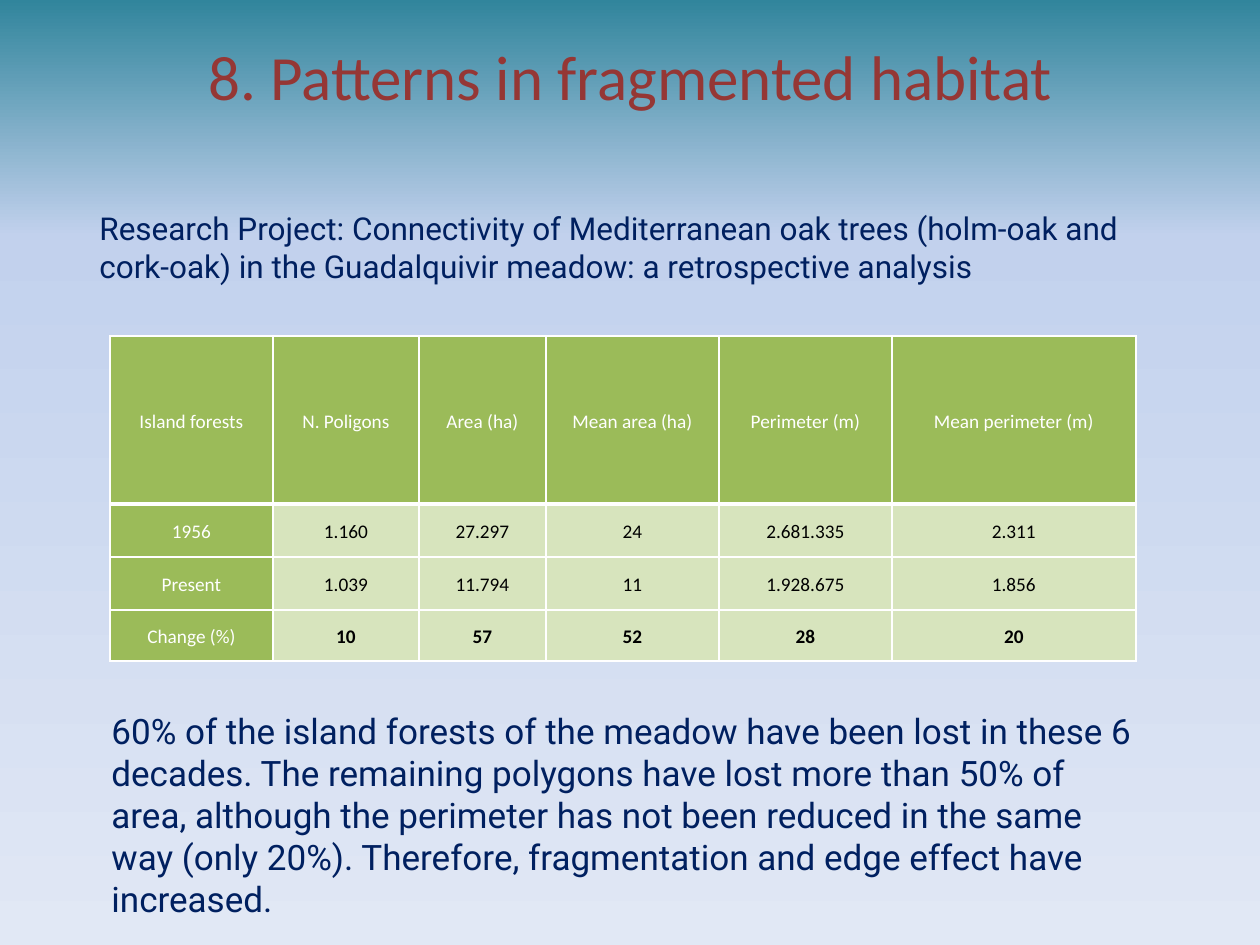
from dataclasses import dataclass

from lxml import etree
from pptx import Presentation
from pptx import util as u
from pptx.dml.color import RGBColor
from pptx.enum import text
from pptx.oxml import ns
from copy import deepcopy

EMU_PER_PX = 914400 / 126


def px(length):
    return u.Emu(round(length * EMU_PER_PX))


@dataclass(frozen=True)
class Theme:
    title_color: str = "953735"
    body_color: str = "002060"
    header_fill: str = "9BBB59"
    value_fill: str = "D7E4BD"
    light: str = "FFFFFF"
    dark: str = "000000"
    background: tuple = ((0, "31859C"), (0.25, "C2D1ED"), (1, "E1E8F5"))
    heading_font: str = "Calibri"
    body_font: str = "Roboto"
    title_size: int = 36
    intro_size: int = 18
    conclusion_size: int = 20
    table_size: int = 11


class SlideBuilder:
    def __init__(self, deck, theme):
        self.theme = theme
        self.slide = deck.slides.add_slide(deck.slide_layouts[6])

    def background(self):
        fill = self.slide.background.fill
        fill.gradient()
        fill.gradient_angle = 270
        stop_list = next(self.slide.element.iter(ns.qn("a:gsLst")))
        stop_list.append(deepcopy(stop_list[-1]))
        for stop, (position, color) in zip(fill.gradient_stops, self.theme.background):
            stop.position = position
            stop.color.rgb = RGBColor.from_string(color)

    def style(self, para, font, size, color, bold=False):
        for span in para.runs:
            span.font.name = font
            span.font.size = u.Pt(size)
            span.font.bold = bold
            span.font.color.rgb = RGBColor.from_string(color)

    def text_box(self, bounds, words, font, size, color):
        box = self.slide.shapes.add_textbox(*map(px, bounds))
        frame = box.text_frame
        frame.word_wrap = True
        frame.text = words
        self.style(frame.paragraphs[0], font, size, color)
        return frame

    def title(self, bounds, words):
        theme = self.theme
        frame = self.text_box(bounds, words, theme.heading_font,
                              theme.title_size, theme.title_color)
        frame.vertical_anchor = text.MSO_ANCHOR.MIDDLE
        frame.paragraphs[0].alignment = text.PP_ALIGN.CENTER

    def body(self, bounds, words, size):
        frame = self.text_box(bounds, words, self.theme.body_font,
                              size, self.theme.body_color)
        frame.auto_size = text.MSO_AUTO_SIZE.SHAPE_TO_FIT_TEXT

    def cell_borders(self, cell, bottom):
        properties = cell._tc.get_or_add_tcPr()
        for index, (side, width) in enumerate(
                (("L", 1), ("R", 1), ("T", 1), ("B", bottom))):
            line = etree.Element(ns.qn(f"a:ln{side}"), w=str(u.Pt(width)))
            solid = etree.SubElement(line, ns.qn("a:solidFill"))
            etree.SubElement(solid, ns.qn("a:srgbClr"), val=self.theme.light)
            properties.insert(index, line)

    def cell(self, cell, words, is_header, bold, bottom):
        theme = self.theme
        cell.fill.solid()
        cell.fill.fore_color.rgb = RGBColor.from_string(
            theme.header_fill if is_header else theme.value_fill)
        cell.margin_left = cell.margin_right = px(6)
        cell.margin_top = cell.margin_bottom = 0
        cell.vertical_anchor = text.MSO_ANCHOR.MIDDLE
        cell.text_frame.text = words
        para = cell.text_frame.paragraphs[0]
        para.alignment = text.PP_ALIGN.CENTER
        para.line_spacing = 1.15
        self.style(para, theme.heading_font, theme.table_size,
                   theme.light if is_header else theme.dark, bold)
        self.cell_borders(cell, bottom)

    def table(self, left, top, widths, heights, rows):
        """Header row and column share one look; the last row's values are bold."""
        table = self.slide.shapes.add_table(
            len(rows), len(widths), px(left), px(top),
            px(sum(widths)), px(sum(heights))).table
        table.horz_banding = False
        for column, width in zip(table.columns, widths):
            column.width = px(width)
        last = len(rows) - 1
        for r, (row, height) in enumerate(zip(rows, heights)):
            table.rows[r].height = px(height)
            for c, words in enumerate(row):
                self.cell(table.cell(r, c), words,
                          is_header=r == 0 or c == 0,
                          bold=r == last and c > 0,
                          bottom=3 if r == 0 else 1)


FOREST_ROWS = (
    ("Island forests", "N. Poligons", "Area (ha)", "Mean area (ha)",
     "Perimeter (m)", "Mean perimeter (m)"),
    ("1956", "1.160", "27.297", "24", "2.681.335", "2.311"),
    ("Present", "1.039", "11.794", "11", "1.928.675", "1.856"),
    ("Change (%)", "10", "57", "52", "28", "20"),
)


def main():
    deck = Presentation()
    deck.slide_width, deck.slide_height = px(1260), px(945)
    theme = Theme()
    page = SlideBuilder(deck, theme)
    page.background()
    page.title((25, 16, 1211, 118), "8. Patterns in fragmented habitat")
    page.body((87, 203, 1071, 89),
              "Research Project: Connectivity of Mediterranean oak trees "
              "(holm-oak and cork-oak) in the Guadalquivir meadow: "
              "a retrospective analysis", theme.intro_size)
    page.table(110, 336, (163, 146, 127, 173, 173, 244),
               (168, 53, 53, 51), FOREST_ROWS)
    page.body((99, 703, 1051, 140),
              "60% of the island forests of the meadow have been lost in these "
              "6 decades. The remaining polygons have lost more than 50% of area, "
              "although the perimeter has not been reduced in the same way "
              "(only 20%). Therefore, fragmentation and edge effect have "
              "increased.", theme.conclusion_size)
    deck.save("out.pptx")


if __name__ == "__main__":
    main()
